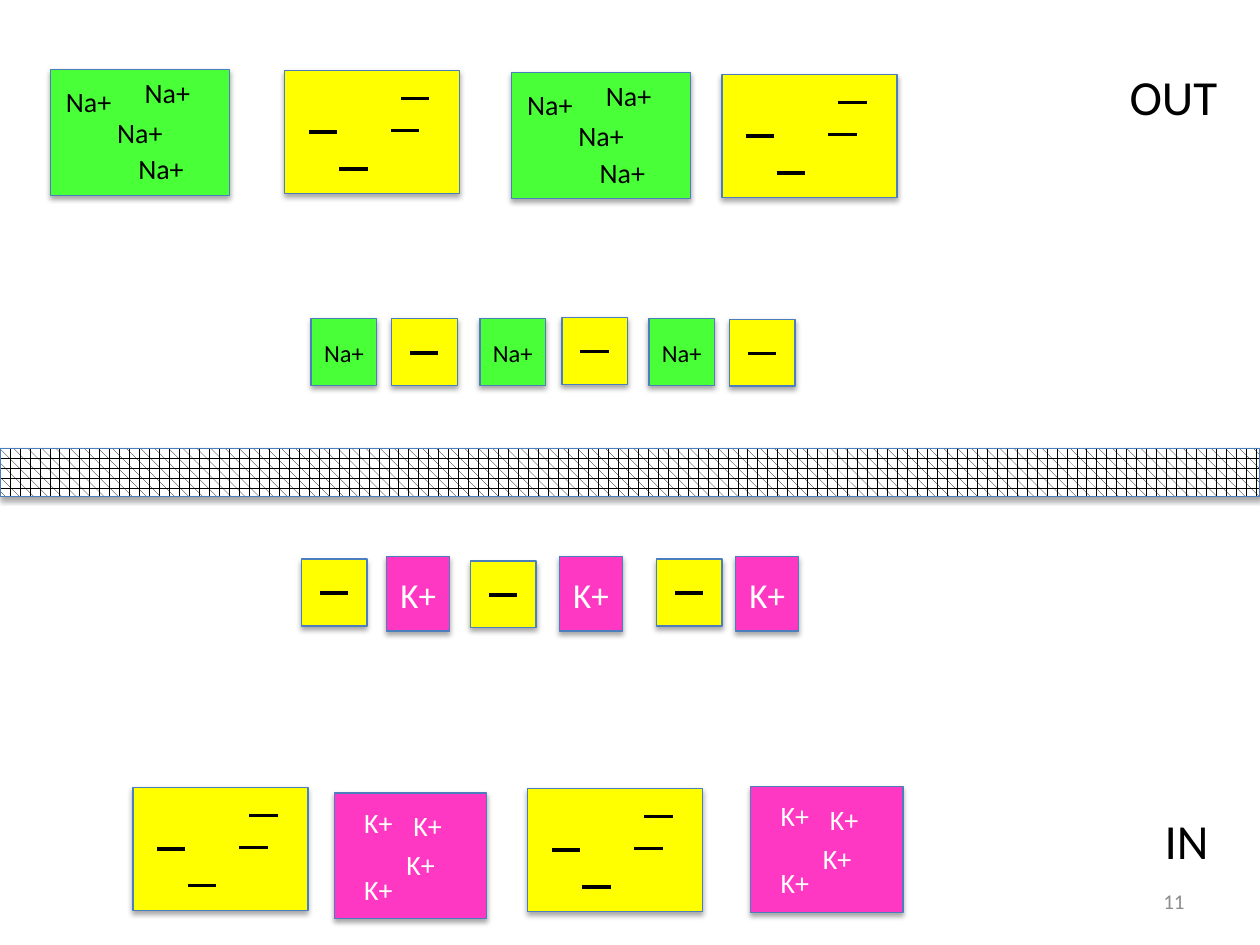
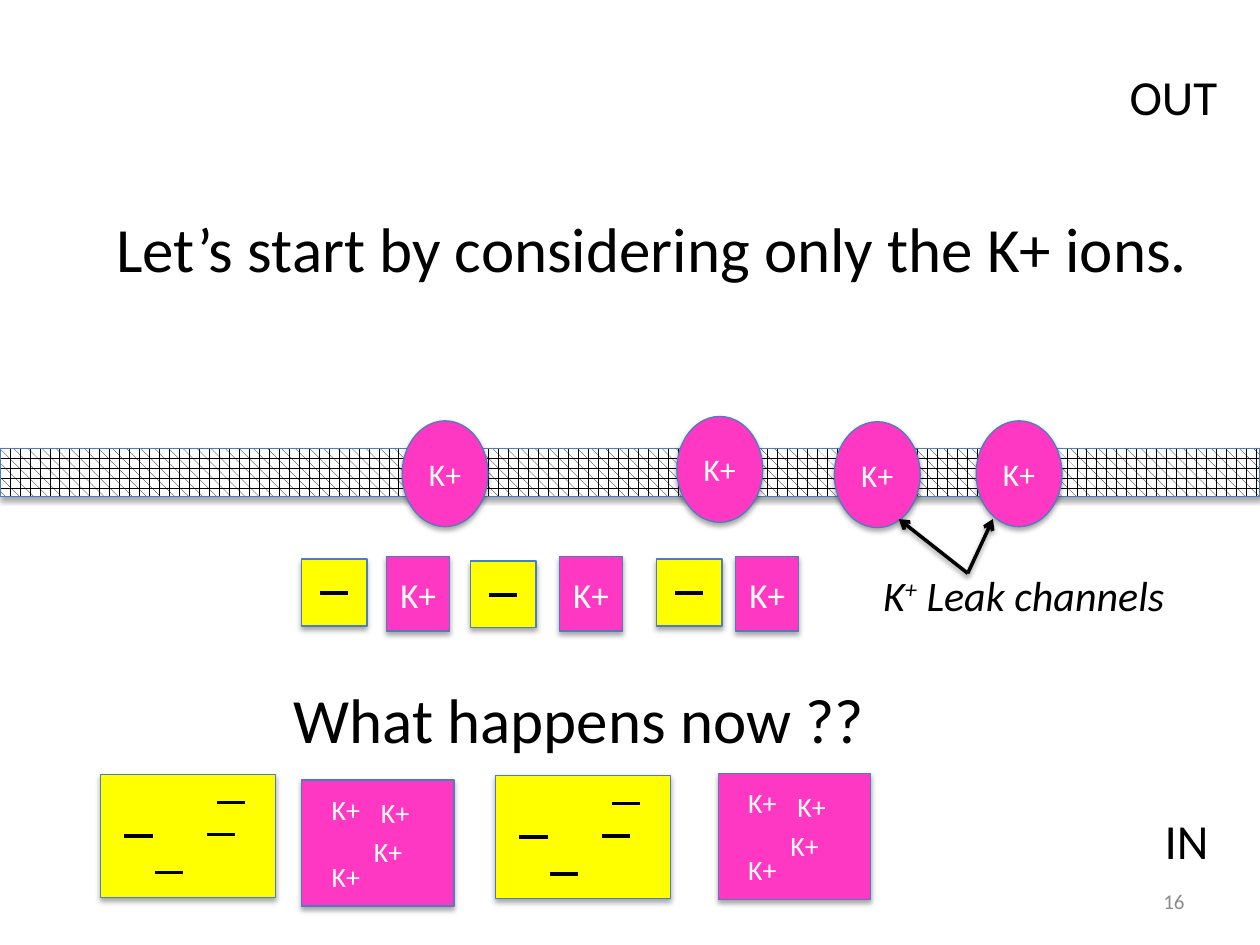
from pptx import Presentation
from pptx.dml.color import RGBColor
from pptx.enum.dml import MSO_PATTERN
from pptx.enum.shapes import MSO_CONNECTOR, MSO_SHAPE
from pptx.enum.text import MSO_ANCHOR, MSO_AUTO_SIZE, PP_ALIGN
from pptx.oxml.ns import qn
from pptx.util import Pt
from lxml import etree

RECTANGLE, OVAL = MSO_SHAPE.RECTANGLE, MSO_SHAPE.OVAL
STRAIGHT = MSO_CONNECTOR.STRAIGHT
PLAID = MSO_PATTERN.PLAID
MIDDLE = MSO_ANCHOR.MIDDLE
LEFT, CENTER, RIGHT = PP_ALIGN.LEFT, PP_ALIGN.CENTER, PP_ALIGN.RIGHT
FIT_SHAPE = MSO_AUTO_SIZE.SHAPE_TO_FIT_TEXT

FONT = "Calibri"
COLORS = {
    "sodium": "48FF38",
    "potassium": "FF38C3",
    "anion": "FFFF00",
    "outline": "4B7EBC",
    "black": "000000",
    "white": "FFFFFF",
    "number": "8C8C8C",
}
PAGE_WIDTH, PAGE_HEIGHT = 720, 540
DASH_LENGTH = 16.2

# Sizes of the ion boxes, and where their contents sit from the top left corner
SMALL_SIZE = (37.5, 38.2)
SMALL_POTASSIUM_SIZE = (36, 42.5)
SODIUM_SIZE = (102.2, 72)
ANION_SIZE = (100, 70.4)
POTASSIUM_SIZE = (87, 72)
SMALL_DASH = [(10.5, 19.4)]
ANION_DASHES = [(66.5, 16), (60.8, 34.4), (13.7, 35.2), (31.2, 56.2)]
SODIUM_LABELS = [(46.8, 0), (43.2, 43.7), (1.8, 5)]
POTASSIUM_LABELS = [(10, 3.6), (38.2, 5.6), (34.2, 27.7), (10, 41.9)]


def color(name):
    return RGBColor.from_string(COLORS[name])


def set_effects(item, shadow_opacity=0, distance=1.8):
    """Replace the theme shadow by a soft downward one, or by none."""
    effects = etree.SubElement(item._element.spPr, qn("a:effectLst"))
    if shadow_opacity:
        shadow = etree.SubElement(
            effects, qn("a:outerShdw"), blurRad=str(Pt(3.1)),
            dist=str(Pt(distance)), dir="5400000", rotWithShape="0")
        tint = etree.SubElement(shadow, qn("a:srgbClr"), val=COLORS["black"])
        etree.SubElement(tint, qn("a:alpha"), val=str(shadow_opacity * 1000))


def style_paragraph(para, size, ink, align=LEFT, italic=False):
    para.alignment = align
    font = para.font
    font.name, font.size, font.italic = FONT, Pt(size), italic
    font.color.rgb = color(ink)


def add_block(page, kind, box, fill, text="", size=16, ink="white"):
    """Add an outlined, shadowed shape; fill None gives the plaid pattern."""
    block = page.shapes.add_shape(kind, *map(Pt, box))
    if fill:
        block.fill.solid()
        block.fill.fore_color.rgb = color(fill)
    else:
        block.fill.patterned()
        block.fill.pattern = PLAID
        block.fill.fore_color.rgb = color("black")
        block.fill.back_color.rgb = color("white")
    block.line.color.rgb = color("outline")
    block.line.width = Pt(0.75)
    set_effects(block, shadow_opacity=35)
    if text:
        frame = block.text_frame
        frame.vertical_anchor = MIDDLE
        para = frame.paragraphs[0]
        para.text = text
        style_paragraph(para, size, ink, CENTER)


def add_text(page, box, text, size, ink="black", wrap=True):
    frame = page.shapes.add_textbox(*map(Pt, box)).text_frame
    frame.word_wrap = wrap
    frame.auto_size = FIT_SHAPE
    para = frame.paragraphs[0]
    para.text = text
    style_paragraph(para, size, ink)
    return frame


def add_line(page, start, end):
    line = page.shapes.add_connector(STRAIGHT, *map(Pt, (*start, *end)))
    line.line.color.rgb = color("black")
    line.line.width = Pt(2)
    return line


def add_anions(page, corner, size, dashes):
    left, top = corner
    add_block(page, RECTANGLE, (*corner, *size), "anion")
    for x, y in dashes:
        start = (left + x, top + y)
        set_effects(add_line(page, start, (start[0] + DASH_LENGTH, start[1])))


def add_cation_pool(page, corner, size, fill, label, ink, offsets,
                    label_width, centre_label=""):
    left, top = corner
    add_block(page, RECTANGLE, (*corner, *size), fill, centre_label, ink=ink)
    for x, y in offsets:
        add_text(page, (left + x, top + y, label_width, 26.6), label, 16, ink)


def add_outside_pools(page):
    for corner in [(28.8, 39.6), (292.4, 41.6)]:
        add_cation_pool(page, corner, SODIUM_SIZE, "sodium", "Na+", "black",
                        SODIUM_LABELS, 56, centre_label="Na+")
    for corner in [(162.7, 40.3), (412.6, 42.6)]:
        add_anions(page, corner, ANION_SIZE, ANION_DASHES)


def add_outside_row(page):
    """Sodium and negative ions lined up above the membrane."""
    for index in range(3):
        box = (177.8 + 96.5 * index, 182.2, *SMALL_SIZE)
        add_block(page, RECTANGLE, box, "sodium", "Na+", 14, "black")
    for corner in [(223.8, 182.2), (321.1, 181.5), (416.8, 182.5)]:
        add_anions(page, corner, SMALL_SIZE, SMALL_DASH)


def add_inside_row(page):
    """Potassium and negative ions lined up below the membrane."""
    for left in (221, 319.7, 420.4):
        box = (left, 318.2, *SMALL_POTASSIUM_SIZE)
        add_block(page, RECTANGLE, box, "potassium", "K+", 20)
    for corner in [(172.2, 319.5), (268.8, 320.6), (375.1, 319.5)]:
        add_anions(page, corner, SMALL_SIZE, SMALL_DASH)


def add_inside_pools(page, left, top):
    for x, y in [(115, 3.7), (353, 0)]:
        add_cation_pool(page, (left + x, top + y), POTASSIUM_SIZE, "potassium",
                        "K+", "white", POTASSIUM_LABELS, 45.4)
    for x, y in [(0, 0.5), (225.6, 1.2)]:
        add_anions(page, (left + x, top + y), ANION_SIZE, ANION_DASHES)


def add_membrane_scene(page, number):
    """Membrane, side names and page number found on every page."""
    add_block(page, RECTANGLE, (0, 256.4, PAGE_WIDTH, 27.4), None)
    add_text(page, (658.4, 459.6, 39.6, 41.2), "IN", 28, wrap=False)
    add_text(page, (638.4, 34.6, 64.8, 41.2), "OUT", 28, wrap=False)
    frame = add_text(page, (516, 500.5, 168, 28.8), str(number), 12, "number")
    frame.auto_size = MSO_AUTO_SIZE.NONE
    frame.vertical_anchor = MIDDLE
    frame.paragraphs[0].alignment = RIGHT


def add_leak_channels(page):
    for left, top in [(386.8, 238), (229.8, 240.5), (476.8, 241), (557.8, 240.5)]:
        add_block(page, OVAL, (left, top, 49, 60.5), "potassium", "K+", 18)

    frame = add_text(page, (497.5, 321.8, 183.6, 36), "", 24)
    para = frame.paragraphs[0]
    para.font.italic = True
    for part in ("K", "+", " Leak channels"):
        span = para.add_run()
        span.text = part
        if part == "+":
            span._r.get_or_add_rPr().set("baseline", "30000")

    for tip in [(513.6, 296.6), (567.4, 296.6)]:
        arrow = add_line(page, (553, 327.6), tip)
        etree.SubElement(arrow.line._get_or_add_ln(), qn("a:tailEnd"), type="arrow")
        set_effects(arrow, shadow_opacity=38, distance=1.6)


def add_ion_balance_page(deck):
    page = deck.slides.add_slide(deck.slide_layouts[6])
    add_membrane_scene(page, 11)
    add_outside_row(page)
    add_inside_row(page)
    add_outside_pools(page)
    add_inside_pools(page, 76, 449.4)


def add_potassium_page(deck):
    page = deck.slides.add_slide(deck.slide_layouts[6])
    add_membrane_scene(page, 16)
    add_leak_channels(page)
    add_text(page, (160.6, 385.2, 344.2, 51), "What happens now ??", 36, wrap=False)
    add_inside_row(page)
    add_text(page, (59.4, 116, 632.2, 51),
             "Let’s start by considering only the K+ ions.", 36, wrap=False)
    add_inside_pools(page, 57.4, 442)


def main():
    deck = Presentation()
    deck.slide_width, deck.slide_height = Pt(PAGE_WIDTH), Pt(PAGE_HEIGHT)
    add_ion_balance_page(deck)
    add_potassium_page(deck)
    deck.save("out.pptx")


if __name__ == "__main__":
    main()
